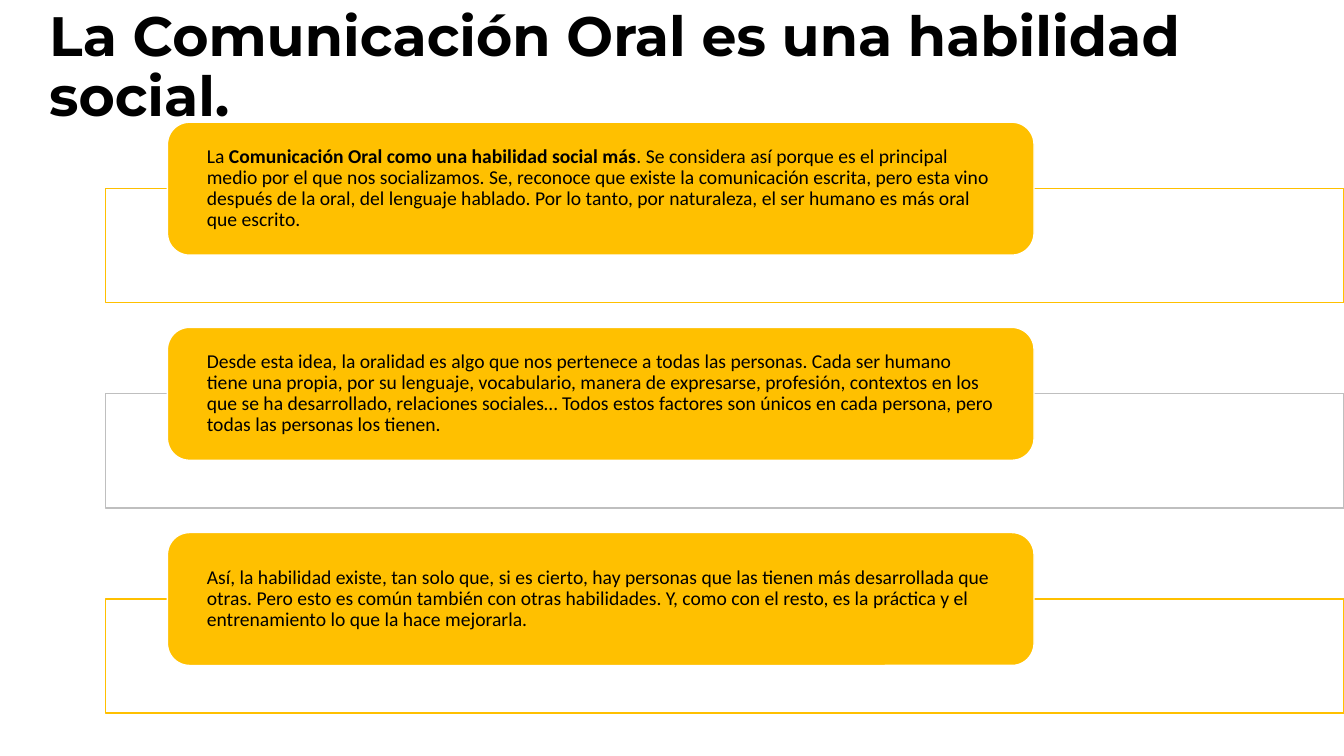
import pptx
import pptx.util
import pptx.dml.color
import pptx.enum.shapes
import pptx.enum.text
from pptx.util import Cm, Pt

COLORS = {"gold": "FFC000", "gray": "BFBFBF", "white": "FFFFFF", "black": "000000"}
SHAPE = pptx.enum.shapes.MSO_SHAPE
MIDDLE = pptx.enum.text.MSO_ANCHOR.MIDDLE
LEFT = pptx.enum.text.PP_ALIGN.LEFT


def rgb(name):
    return pptx.dml.color.RGBColor.from_string(COLORS[name])


def write(shape, runs, font, size, inset):
    """Fill a shape with one left-aligned paragraph of (text, bold) runs."""
    frame = shape.text_frame
    frame.word_wrap = True
    frame.vertical_anchor = MIDDLE
    frame.margin_left = frame.margin_right = Cm(inset)
    frame.margin_top = frame.margin_bottom = 0
    para = frame.paragraphs[0]
    para.alignment = LEFT
    para.line_spacing = 0.9
    for text, bold in runs:
        run = para.add_run()
        run.text = text
        run.font.name = font
        run.font.size = Pt(size)
        run.font.bold = bold
        run.font.color.rgb = rgb("black")


deck = pptx.Presentation()
deck.slide_width, deck.slide_height = Cm(33.87), Cm(19.05)
slide = deck.slides.add_slide(deck.slide_layouts[6])

title = slide.shapes.add_textbox(Cm(0.99), Cm(0.46), Cm(29.21), Cm(2.54))
write(title, [("La Comunicación Oral es una habilidad social.", True)],
      "Montserrat", 39.6, 0.25)

ideas = [
    ("gold", [
        ("La ", False),
        ("Comunicación Oral como una habilidad social más", True),
        (". Se considera así porque es el principal medio por el que nos "
         "socializamos. Se, reconoce que existe la comunicación escrita, pero esta "
         "vino después de la oral, del lenguaje hablado. Por lo tanto, por "
         "naturaleza, el ser humano es más oral que escrito.", False)]),
    ("gray", [
        ("Desde esta idea, la oralidad es algo que nos pertenece a todas las "
         "personas. Cada ser humano tiene una propia, por su lenguaje, vocabulario, "
         "manera de expresarse, profesión, contextos en los que se ha desarrollado, "
         "relaciones sociales… Todos estos factores son únicos en cada persona, "
         "pero todas las personas los tienen.", False)]),
    ("gold", [
        ("Así, la habilidad existe, tan solo que, si es cierto, hay personas que "
         "las tienen más desarrollada que otras. Pero esto es común también con "
         "otras habilidades. Y, como con el resto, es la práctica y el "
         "entrenamiento lo que la hace mejorarla.", False)]),
]

for row, (edge, runs) in enumerate(ideas):
    top = 3.08 + 5.17 * row
    box = slide.shapes.add_shape(
        SHAPE.RECTANGLE, Cm(2.66), Cm(top + 1.67), Cm(31.21), Cm(2.88))
    card = slide.shapes.add_shape(
        SHAPE.ROUNDED_RECTANGLE, Cm(4.22), Cm(top), Cm(21.84), Cm(3.35))
    for shape, fill, line in ((box, "white", edge), (card, "gold", "white")):
        shape.shadow.inherit = False
        shape.fill.solid()
        shape.fill.fore_color.rgb = rgb(fill)
        shape.line.color.rgb = rgb(line)
        shape.line.width = Pt(1)
    write(card, runs, "Calibri", 14, 0.83)

deck.save("out.pptx")
